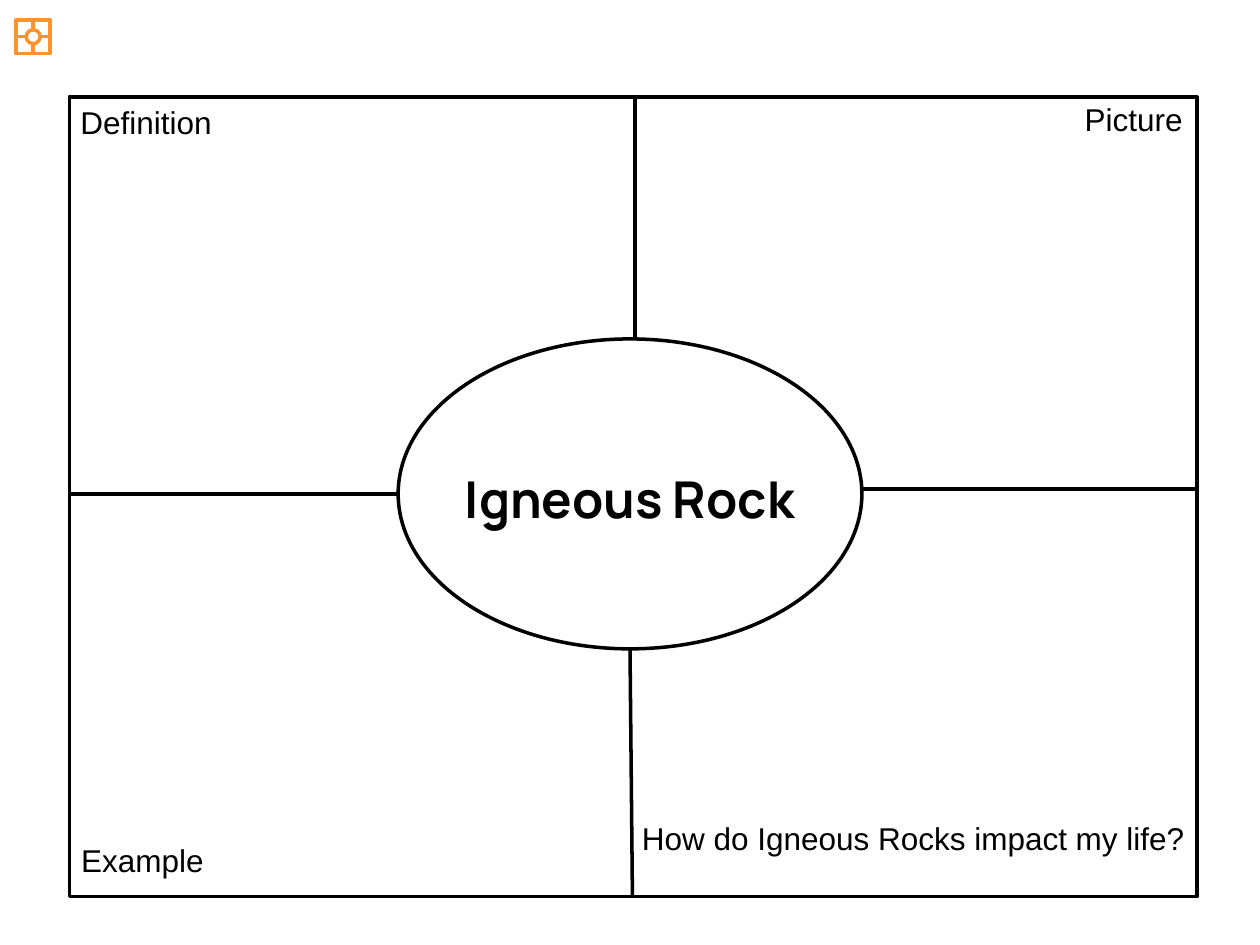
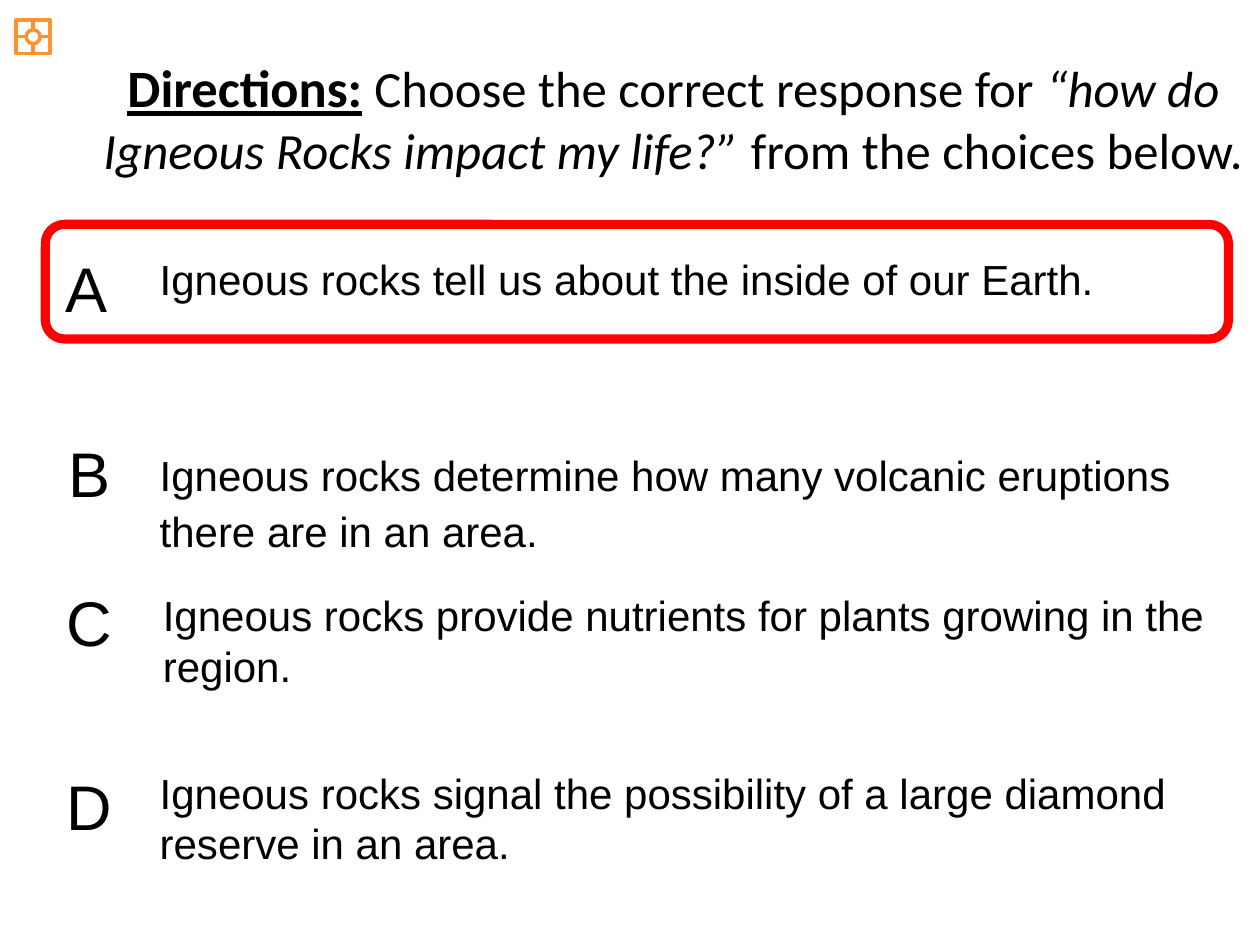
import pptx
import pptx.util
import pptx.dml.color
import pptx.enum.shapes
import pptx.enum.text
import pptx.oxml.ns
from lxml import etree

Pt = pptx.util.Pt
RGB = pptx.dml.color.RGBColor
SHAPE = pptx.enum.shapes.MSO_SHAPE
ALIGN = pptx.enum.text.PP_ALIGN

BLACK = RGB(0, 0, 0)
WHITE = RGB(255, 255, 255)
ORANGE = RGB(0xFF, 0x93, 0x2B)
RED = RGB(255, 0, 0)

LABEL = dict(name="Arial", size=Pt(18))
CHOICE = dict(name="Arial", size=Pt(24))
LETTER = dict(name="Arial", size=Pt(36))
TOPIC = dict(name="Manrope", size=Pt(29), bold=True)
TITLE = dict(name="Calibri", size=Pt(29))
LEAD = dict(name="Calibri", size=Pt(30), bold=True)


def add_shape(slide, kind, box, color, width=2, fill=None):
    shape = slide.shapes.add_shape(kind, *map(Pt, box))
    shape.shadow.inherit = False
    if fill is None:
        shape.fill.background()
    else:
        shape.fill.solid()
        shape.fill.fore_color.rgb = fill
    shape.line.color.rgb = color
    shape.line.width = Pt(width)
    return shape


def add_line(slide, ends, color):
    line = slide.shapes.add_connector(
        pptx.enum.shapes.MSO_CONNECTOR.STRAIGHT, *map(Pt, ends))
    line.line.color.rgb = color
    line.line.width = Pt(2)
    etree.SubElement(line._element.spPr, pptx.oxml.ns.qn("a:effectLst"))


def add_text(slide, box, runs, align=ALIGN.LEFT, spacing=None):
    """Place one paragraph made of (text, font values) runs."""
    frame = slide.shapes.add_textbox(*map(Pt, box)).text_frame
    frame.word_wrap = True
    frame.auto_size = pptx.enum.text.MSO_AUTO_SIZE.SHAPE_TO_FIT_TEXT
    para = frame.paragraphs[0]
    para.alignment = align
    if spacing:
        para.line_spacing = spacing
    for text, style in runs:
        run = para.add_run()
        run.text = text
        run.font.color.rgb = BLACK
        for key, value in style.items():
            setattr(run.font, key, value)


def add_icon(slide):
    x, y, half, hub = 19, 21, 9.7, 4
    add_shape(slide, SHAPE.RECTANGLE,
              (x - half, y - half, 2 * half, 2 * half), ORANGE)
    for dx, dy in ((0, -1), (0, 1), (-1, 0), (1, 0)):
        add_line(slide, (x + dx * hub, y + dy * hub,
                         x + dx * half, y + dy * half), ORANGE)
    add_shape(slide, SHAPE.OVAL,
              (x - hub, y - hub, 2 * hub, 2 * hub), ORANGE, fill=WHITE)


def add_slide(deck):
    slide = deck.slides.add_slide(deck.slide_layouts[6])
    add_icon(slide)
    return slide


def build_model(deck):
    slide = add_slide(deck)
    left, top, right, base = 39.6, 55.4, 684, 512.4
    oval = (227.5, 193.7, 265, 177.1)
    add_shape(slide, SHAPE.RECTANGLE,
              (left, top, right - left, base - top), BLACK)
    for ends in ((363, top, 363, oval[1]),
                 (360, oval[1] + oval[3], 361.4, base),
                 (left, 282.2, oval[0], 282.2),
                 (oval[0] + oval[2], 279.4, right, 279.4)):
        add_line(slide, ends, BLACK)
    add_shape(slide, SHAPE.OVAL, oval, BLACK, fill=WHITE)
    for text, box, align in (
            ("Definition", (38.9, 55.4, 90, 29), ALIGN.LEFT),
            ("Example", (39.3, 476.9, 85, 29), ALIGN.LEFT),
            ("Picture", (612.7, 53.5, 71.5, 29), ALIGN.LEFT),
            ("How do Igneous Rocks impact my life?",
             (345.6, 464.4, 338.4, 29), ALIGN.RIGHT)):
        add_text(slide, box, [(text, LABEL)], align)
    add_text(slide, (235.4, 263.5, 249, 42.5),
             [("Igneous Rock", TOPIC)], ALIGN.CENTER)


def build_quiz(deck):
    slide = add_slide(deck)
    add_text(slide, (49.7, 28.1, 670.3, 78.5), [
        ("Directions:", LEAD | {"underline": True}),
        (" ", LEAD),
        ("Choose the correct response for ", TITLE),
        ("“how do Igneous Rocks impact my life?” ", TITLE | {"italic": True}),
        ("from the choices below.", TITLE),
    ], ALIGN.CENTER)
    answer = add_shape(slide, SHAPE.ROUNDED_RECTANGLE,
                       (25.9, 128.2, 676.1, 65.5), RED, 5.25)
    answer.adjustments[0] = 0.167
    for letter, spot, text, box, spacing in (
            ("A", (30.2, 139),
             "Igneous rocks tell us about the inside of our Earth.",
             (84.2, 141.1, 627.8, 36), None),
            ("B", (32, 244.8),
             "Igneous rocks determine how many volcanic eruptions "
             "there are in an area.",
             (84.2, 250.6, 620, 71.3), 1.1),
            ("C", (31, 329.8),
             "Igneous rocks provide nutrients for plants growing "
             "in the region.",
             (86, 333.4, 620, 65.5), None),
            ("D", (31, 434.8),
             "Igneous rocks signal the possibility of a large diamond "
             "reserve in an area.",
             (84.2, 434.9, 620, 65.5), None)):
        add_text(slide, (*spot, 41, 51), [(letter, LETTER)])
        add_text(slide, box, [(text, CHOICE)], spacing=spacing)


def main():
    deck = pptx.Presentation()
    deck.slide_width, deck.slide_height = Pt(720), Pt(540)
    build_model(deck)
    build_quiz(deck)
    deck.save("out.pptx")


if __name__ == "__main__":
    main()
